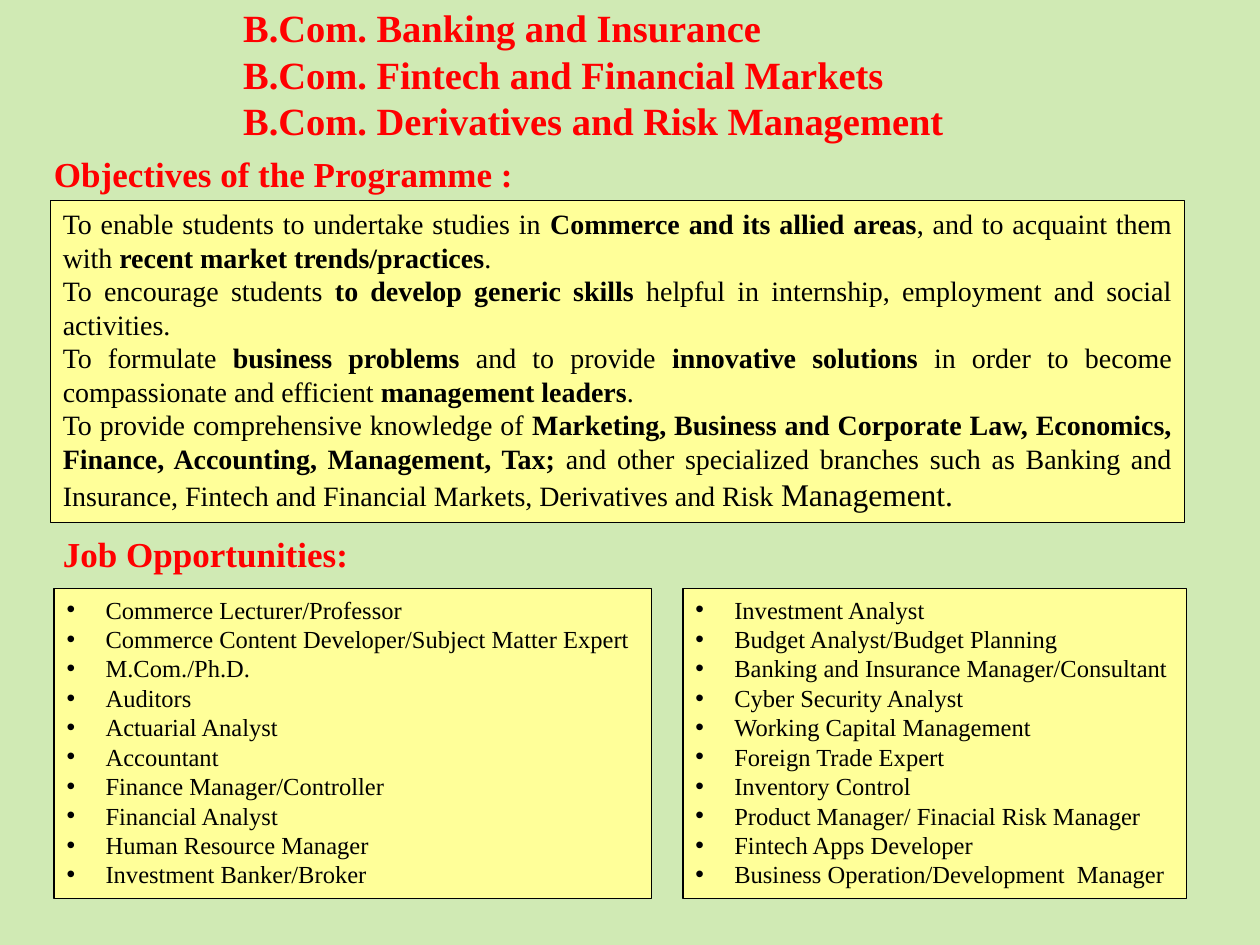
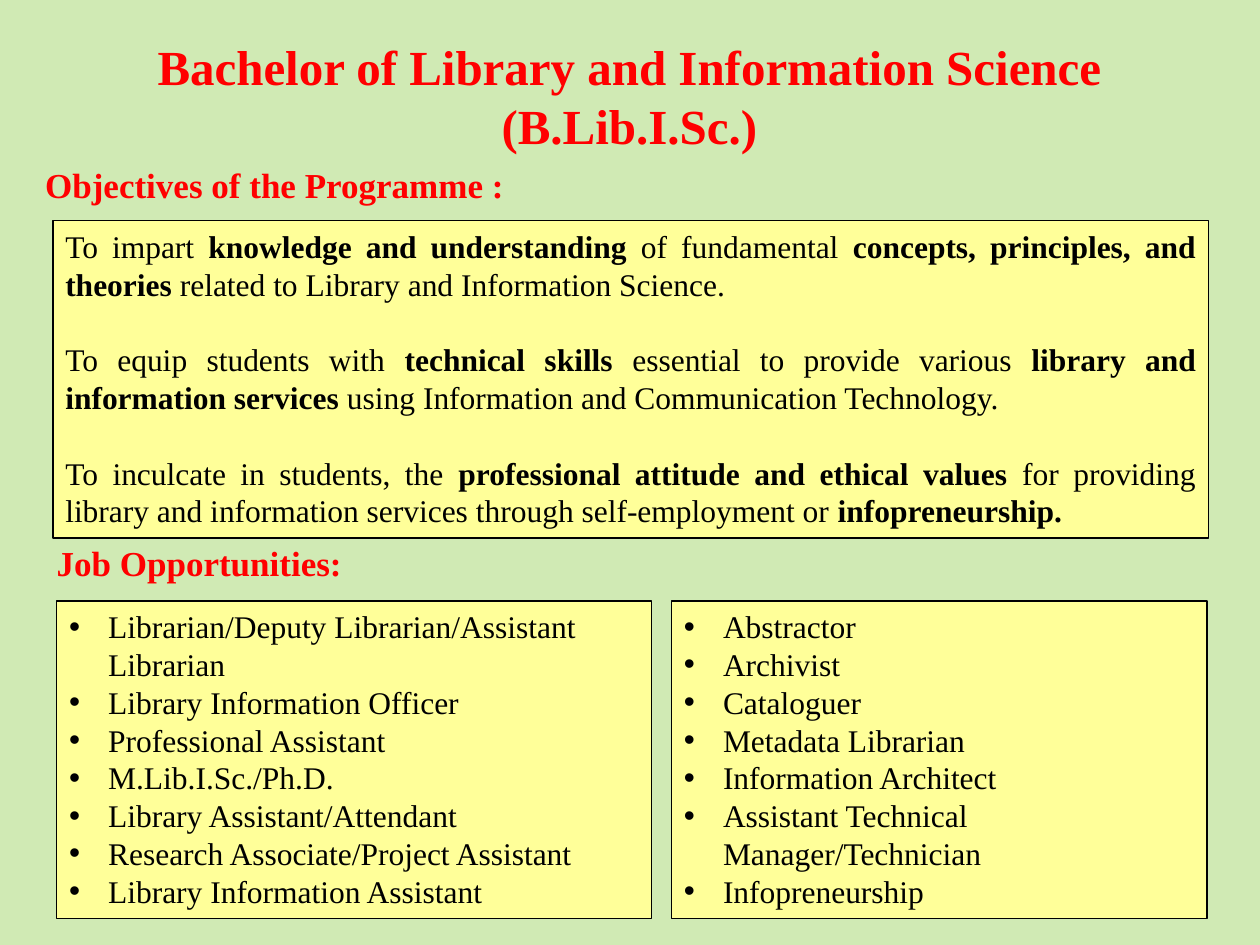
import pptx
import pptx.util
import pptx.dml.color
import pptx.enum.shapes
import pptx.enum.text
import lxml.etree
from pptx.util import Inches, Pt

RGB = pptx.dml.color.RGBColor
ALIGN = pptx.enum.text.PP_ALIGN
ANCHOR = pptx.enum.text.MSO_ANCHOR
FIT = pptx.enum.text.MSO_AUTO_SIZE

GREEN = RGB(0xD0, 0xEA, 0xB4)
YELLOW = RGB(0xFF, 0xFF, 0x99)
RED = RGB(0xFF, 0, 0)
BLACK = RGB(0, 0, 0)
FONT = "Times New Roman"
INDENT = Inches(0.31)

# Boxes are (left, top, width, height) in inches; ** marks bold words.
PAGES = [
    {
        "title": "B.Com. Banking and Insurance\v"
                 "B.Com. Fintech and Financial Markets\v"
                 "B.Com. Derivatives and Risk Management",
        "title_box": (1.83, 0.1, 7.57, 0.97),
        "title_size": 22,
        "title_align": ALIGN.LEFT,
        "heads": [
            ("Objectives of the Programme :", (0.33, 1.16, 4.02, 0.44)),
            ("Job Opportunities:", (0.4, 4.18, 2.62, 0.44)),
        ],
        "goals": [
            "To enable students to undertake studies in **Commerce and its allied areas**, "
            "and to acquaint them with **recent market trends/practices**.",
            "To encourage students **to develop generic skills** helpful in internship, "
            "employment and social activities.",
            "To formulate **business problems** and to provide **innovative solutions** "
            "in order to become compassionate and efficient **management leaders**.",
            "To provide comprehensive knowledge of **Marketing, Business and Corporate Law, "
            "Economics, Finance, Accounting, Management, Tax;** and other specialized "
            "branches such as Banking and Insurance, Fintech and Financial Markets, "
            "Derivatives and Risk ",
        ],
        "goal_end": ("Management.", 18),
        "goal_box": (0.4, 1.59, 9, 2.56),
        "goal_size": 16,
        "goal_gap": 0,
        "job_size": 14,
        "jobs": [
            ((0.43, 4.67, 4.74, 2.46), [
                "Commerce Lecturer/Professor",
                "Commerce Content Developer/Subject Matter Expert",
                "M.Com./Ph.D.",
                "Auditors",
                "Actuarial Analyst",
                "Accountant",
                "Finance Manager/Controller",
                "Financial Analyst",
                "Human Resource Manager",
                "Investment Banker/Broker",
            ]),
            ((5.42, 4.67, 4, 2.46), [
                "Investment Analyst",
                "Budget Analyst/Budget Planning",
                "Banking and Insurance Manager/Consultant",
                "Cyber Security Analyst",
                "Working Capital Management",
                "Foreign Trade Expert",
                "Inventory Control",
                "Product Manager/ Finacial Risk Manager",
                "Fintech Apps Developer",
                "Business Operation/Development  Manager",
            ]),
        ],
    },
    {
        "title": "Bachelor of Library and Information Science (B.Lib.I.Sc.)",
        "title_box": (0.33, 0.17, 9.33, 1.17),
        "title_size": 28,
        "title_align": ALIGN.CENTER,
        "heads": [
            ("Objectives of the Programme :", (0.26, 1.25, 3.94, 0.44)),
            ("Job Opportunities:", (0.35, 4.25, 2.55, 0.44)),
        ],
        "goals": [
            "To impart **knowledge and understanding** of fundamental **concepts, "
            "principles, and theories **related to Library and Information Science.",
            "To equip students with **technical skills **essential to provide various "
            "**library and information services** using Information and "
            "Communication Technology.",
            "To inculcate in students, the **professional attitude and ethical values** "
            "for providing library and information services through self-employment "
            "or **infopreneurship.**",
        ],
        "goal_end": None,
        "goal_box": (0.42, 1.75, 9.17, 2.52),
        "goal_size": 18,
        "goal_gap": 21.6,
        "job_size": 18,
        "jobs": [
            ((0.45, 4.77, 4.72, 2.52), [
                "Librarian/Deputy Librarian/Assistant Librarian",
                "Library Information Officer",
                "Professional Assistant",
                "M.Lib.I.Sc./Ph.D.",
                "Library Assistant/Attendant",
                "Research Associate/Project Assistant",
                "Library Information Assistant",
            ]),
            ((5.33, 4.77, 4.25, 2.52), [
                "Abstractor",
                "Archivist",
                "Cataloguer",
                "Metadata Librarian",
                "Information Architect",
                "Assistant Technical Manager/Technician",
                "Infopreneurship",
            ]),
        ],
    },
]


def style(run, size, color=BLACK, bold=False):
    font = run.font
    font.name, font.size, font.bold = FONT, Pt(size), bold
    font.color.rgb = color


def add_title(slide, page):
    title = slide.shapes.title
    title.left, title.top, title.width, title.height = map(Inches, page["title_box"])
    frame = title.text_frame
    frame.text = page["title"]
    frame.word_wrap = True
    frame.auto_size = FIT.NONE
    frame.vertical_anchor = ANCHOR.MIDDLE
    para = frame.paragraphs[0]
    para.alignment = page["title_align"]
    for run in para.runs:
        style(run, page["title_size"], RED, True)


def add_head(slide, text, box):
    frame = slide.shapes.add_textbox(*map(Inches, box)).text_frame
    frame.text = text
    frame.word_wrap = False
    frame.auto_size = FIT.SHAPE_TO_FIT_TEXT
    style(frame.paragraphs[0].runs[0], 20, RED, True)


def add_panel(slide, box, lines, size, align):
    """Draw a yellow box with one paragraph a line, and return its paragraphs."""
    kind = pptx.enum.shapes.MSO_SHAPE.RECTANGLE
    shape = slide.shapes.add_shape(kind, *map(Inches, box))
    shape.shadow.inherit = False
    shape.fill.solid()
    shape.fill.fore_color.rgb = YELLOW
    shape.line.color.rgb = BLACK
    shape.line.width = Pt(0.75)
    frame = shape.text_frame
    frame.word_wrap = True
    frame.auto_size = FIT.SHAPE_TO_FIT_TEXT
    frame.vertical_anchor = ANCHOR.TOP
    for i, line in enumerate(lines):
        para = frame.add_paragraph() if i else frame.paragraphs[0]
        para.alignment = align
        for j, part in enumerate(line.split("**")):
            if part:
                run = para.add_run()
                run.text = part
                style(run, size, bold=j % 2 == 1)
    return frame.paragraphs


def add_bullet(para):
    props = para._p.get_or_add_pPr()
    props.set("marL", str(INDENT))
    props.set("indent", str(-INDENT))
    for tag, key, value in (("a:buFont", "typeface", "Arial"), ("a:buChar", "char", "•")):
        lxml.etree.SubElement(props, pptx.oxml.ns.qn(tag)).set(key, value)


def add_goals(slide, page):
    size = page["goal_size"]
    paras = add_panel(slide, page["goal_box"], page["goals"], size, ALIGN.JUSTIFY)
    for para in paras[:-1]:
        para.space_after = Pt(page["goal_gap"])
    if page["goal_end"]:
        text, size = page["goal_end"]
        run = paras[-1].add_run()
        run.text = text
        style(run, size)


def main():
    deck = pptx.Presentation()
    deck.slide_width, deck.slide_height = Inches(10), Inches(7.5)
    back = deck.slide_master.background.fill
    back.solid()
    back.fore_color.rgb = GREEN
    for page in PAGES:
        slide = deck.slides.add_slide(deck.slide_layouts[5])
        add_title(slide, page)
        add_goals(slide, page)
        for box, jobs in page["jobs"]:
            for para in add_panel(slide, box, jobs, page["job_size"], ALIGN.LEFT):
                add_bullet(para)
        for text, box in page["heads"]:
            add_head(slide, text, box)
    deck.save("out.pptx")


if __name__ == "__main__":
    main()
